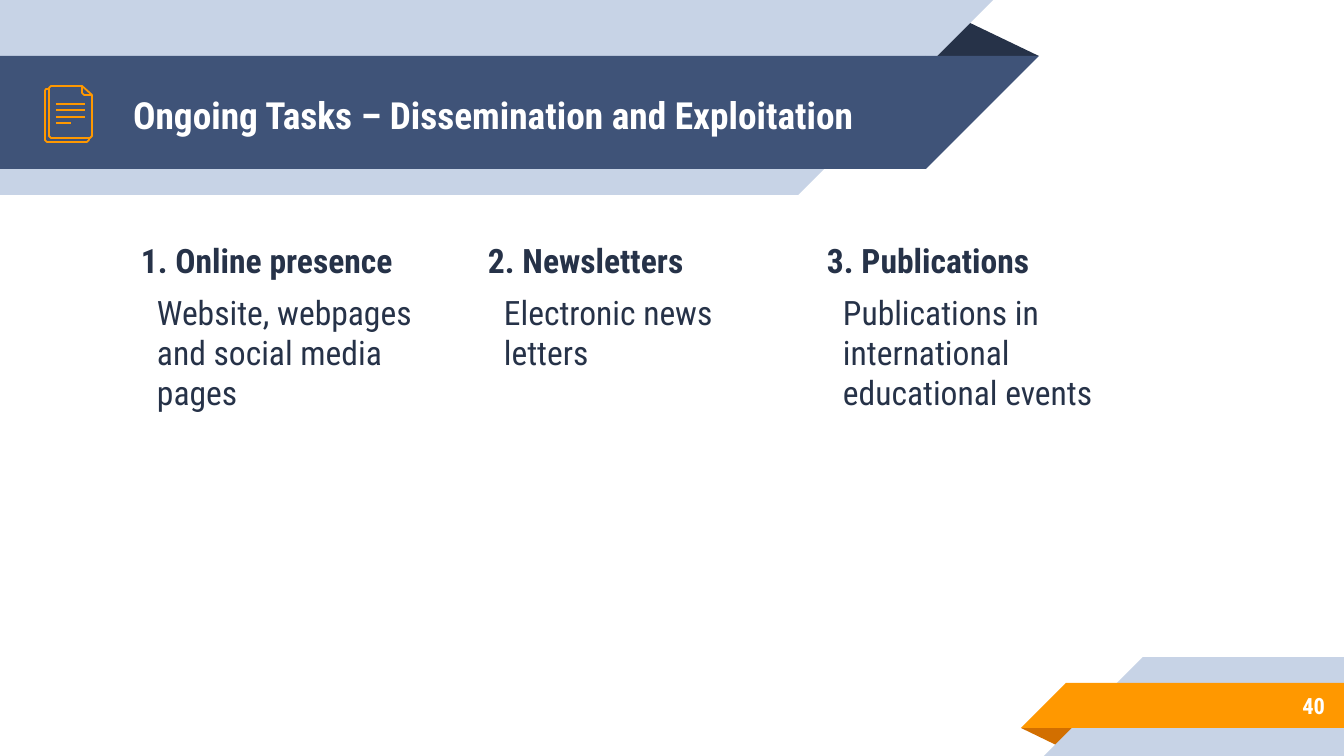
from dataclasses import dataclass

from lxml import etree
from pptx import Presentation
from pptx.dml.color import RGBColor
from pptx.enum.shapes import MSO_CONNECTOR, MSO_SHAPE
from pptx.enum.text import MSO_ANCHOR, PP_ALIGN
from pptx.oxml.ns import qn
from pptx.util import Emu, Pt

RECTANGLE = MSO_SHAPE.RECTANGLE
RIGHT_TRIANGLE = MSO_SHAPE.RIGHT_TRIANGLE
FOLD_TRIANGLE = MSO_SHAPE.ISOSCELES_TRIANGLE
STRAIGHT = MSO_CONNECTOR.STRAIGHT
LEFT, RIGHT = PP_ALIGN.LEFT, PP_ALIGN.RIGHT
TOP, MIDDLE = MSO_ANCHOR.TOP, MSO_ANCHOR.MIDDLE

EMU_PER_PX = 914400 / 134.4
SLIDE_WIDTH, SLIDE_HEIGHT = 1344, 756
INSET = 13
BODY_INDENT = 16
FONT = "Roboto Condensed"
ICON_LINE = Pt(0.96)
FOLD_APEX = 0.324
COLORS = {
    "ink": "263248",
    "navy": "3F5378",
    "pale": "C7D3E6",
    "orange": "FF9800",
    "rust": "D26F00",
    "white": "FFFFFF",
}


@dataclass(frozen=True)
class Box:
    left: int
    top: int
    width: int
    height: int


@dataclass(frozen=True)
class RibbonPart:
    preset: MSO_SHAPE
    box: Box
    color: str
    rotation: int = 0


@dataclass(frozen=True)
class TextLine:
    text: str
    size: int
    color: str
    bold: bool = True
    align: PP_ALIGN = LEFT
    indent: int = 0
    space_before: int = 0


@dataclass(frozen=True)
class Task:
    left: int
    heading: str
    detail: str


@dataclass(frozen=True)
class Outline:
    points: tuple[tuple[int, int], ...]
    closed: bool = False


RIBBON_PARTS = (
    RibbonPart(FOLD_TRIANGLE, Box(925, 19, 114, 37), "ink"),
    RibbonPart(RECTANGLE, Box(0, 0, 798, 195), "pale"),
    RibbonPart(RIGHT_TRIANGLE, Box(798, 0, 195, 195), "pale", 90),
    RibbonPart(RECTANGLE, Box(0, 56, 926, 113), "navy"),
    RibbonPart(RIGHT_TRIANGLE, Box(926, 56, 113, 113), "navy", 90),
    RibbonPart(FOLD_TRIANGLE, Box(1021, 728, 58, 19), "rust", 180),
    RibbonPart(RECTANGLE, Box(1143, 657, 201, 99), "pale"),
    RibbonPart(RIGHT_TRIANGLE, Box(1044, 657, 99, 99), "pale", 270),
    RibbonPart(RECTANGLE, Box(1066, 683, 278, 45), "orange"),
    RibbonPart(RIGHT_TRIANGLE, Box(1021, 683, 45, 45), "orange", 270),
)
TASKS = (
    Task(128, "1. Online presence", "Website, webpages and social media pages"),
    Task(475, "2. Newsletters", "Electronic news letters"),
    Task(814, "3. Publications", "Publications in international educational events"),
)
PAGE_OUTLINES = (
    Outline(((89, 138), (89, 140), (87, 142), (47, 142),
             (45, 140), (45, 91), (46, 89), (48, 89))),
    Outline(((92, 95), (92, 136), (90, 138), (51, 138),
             (49, 136), (49, 88), (51, 86), (82, 86))),
    Outline(((82, 86), (92, 95), (84, 95), (82, 93)), closed=True),
)
WRITING_LEFT = 56
WRITING_ENDS = ((85, 104), (85, 110), (85, 117), (71, 123))


def px(length: int) -> Emu:
    """Turn pixels into EMU."""
    return Emu(round(length * EMU_PER_PX))


def rgb(name: str) -> RGBColor:
    """Look up a named color."""
    return RGBColor.from_string(COLORS[name])


def draw_ribbon_part(slide, part: RibbonPart) -> None:
    """Draw one flat piece of a folded ribbon."""
    box = part.box
    piece = slide.shapes.add_shape(
        part.preset, px(box.left), px(box.top), px(box.width), px(box.height))
    piece.shadow.inherit = False
    piece.fill.solid()
    piece.fill.fore_color.rgb = rgb(part.color)
    piece.line.fill.background()
    piece.rotation = part.rotation
    if part.preset == FOLD_TRIANGLE:
        piece.adjustments[0] = FOLD_APEX


def draw_text(slide, box: Box, lines: tuple[TextLine, ...],
              anchor: MSO_ANCHOR) -> None:
    """Draw a wrapped text box with one paragraph per line."""
    frame = slide.shapes.add_textbox(
        px(box.left), px(box.top), px(box.width), px(box.height)).text_frame
    frame.word_wrap = True
    frame.vertical_anchor = anchor
    frame.margin_left = frame.margin_right = px(INSET)
    frame.margin_top = frame.margin_bottom = px(INSET)
    for index, line in enumerate(lines):
        paragraph = frame.add_paragraph() if index else frame.paragraphs[0]
        paragraph.text = line.text
        paragraph.alignment = line.align
        paragraph.space_before = Pt(line.space_before)
        paragraph.font.name = FONT
        paragraph.font.size = Pt(line.size)
        paragraph.font.bold = line.bold
        paragraph.font.color.rgb = rgb(line.color)
        if line.indent:
            paragraph._p.get_or_add_pPr().set("marL", str(px(line.indent)))


def draw_task(slide, task: Task) -> None:
    """Draw one task column with its heading and detail."""
    lines = (
        TextLine(task.heading, 18, "ink", space_before=6),
        TextLine(task.detail, 18, "ink", bold=False,
                 indent=BODY_INDENT, space_before=6),
    )
    draw_text(slide, Box(task.left, 227, 331, 398), lines, TOP)


def draw_outline(slide, outline: Outline) -> None:
    """Draw one unfilled page edge of the document icon."""
    start, *rest = outline.points
    builder = slide.shapes.build_freeform(*start, scale=EMU_PER_PX)
    builder.add_line_segments(rest, close=outline.closed)
    edge = builder.convert_to_shape()
    edge.shadow.inherit = False
    edge.fill.background()
    edge.line.color.rgb = rgb("orange")
    edge.line.width = ICON_LINE


def draw_writing(slide, right: int, y: int) -> None:
    """Draw one line of writing on the document icon."""
    stroke = slide.shapes.add_connector(
        STRAIGHT, px(WRITING_LEFT), px(y), px(right), px(y))
    stroke.line.color.rgb = rgb("orange")
    stroke.line.width = ICON_LINE
    etree.SubElement(stroke._element.spPr, qn("a:effectLst"))


def main() -> None:
    """Build and save the slide."""
    deck = Presentation()
    deck.slide_width, deck.slide_height = px(SLIDE_WIDTH), px(SLIDE_HEIGHT)
    slide = deck.slides.add_slide(deck.slide_layouts[6])
    for part in RIBBON_PARTS:
        draw_ribbon_part(slide, part)
    title = TextLine("Ongoing Tasks – Dissemination and Exploitation", 20, "white")
    draw_text(slide, Box(120, 58, 773, 113), (title,), MIDDLE)
    for task in TASKS:
        draw_task(slide, task)
    page_number = TextLine("40", 12, "white", align=RIGHT)
    draw_text(slide, Box(1119, 682, 219, 47), (page_number,), MIDDLE)
    for outline in PAGE_OUTLINES:
        draw_outline(slide, outline)
    for right, y in WRITING_ENDS:
        draw_writing(slide, right, y)
    deck.save("out.pptx")


if __name__ == "__main__":
    main()
